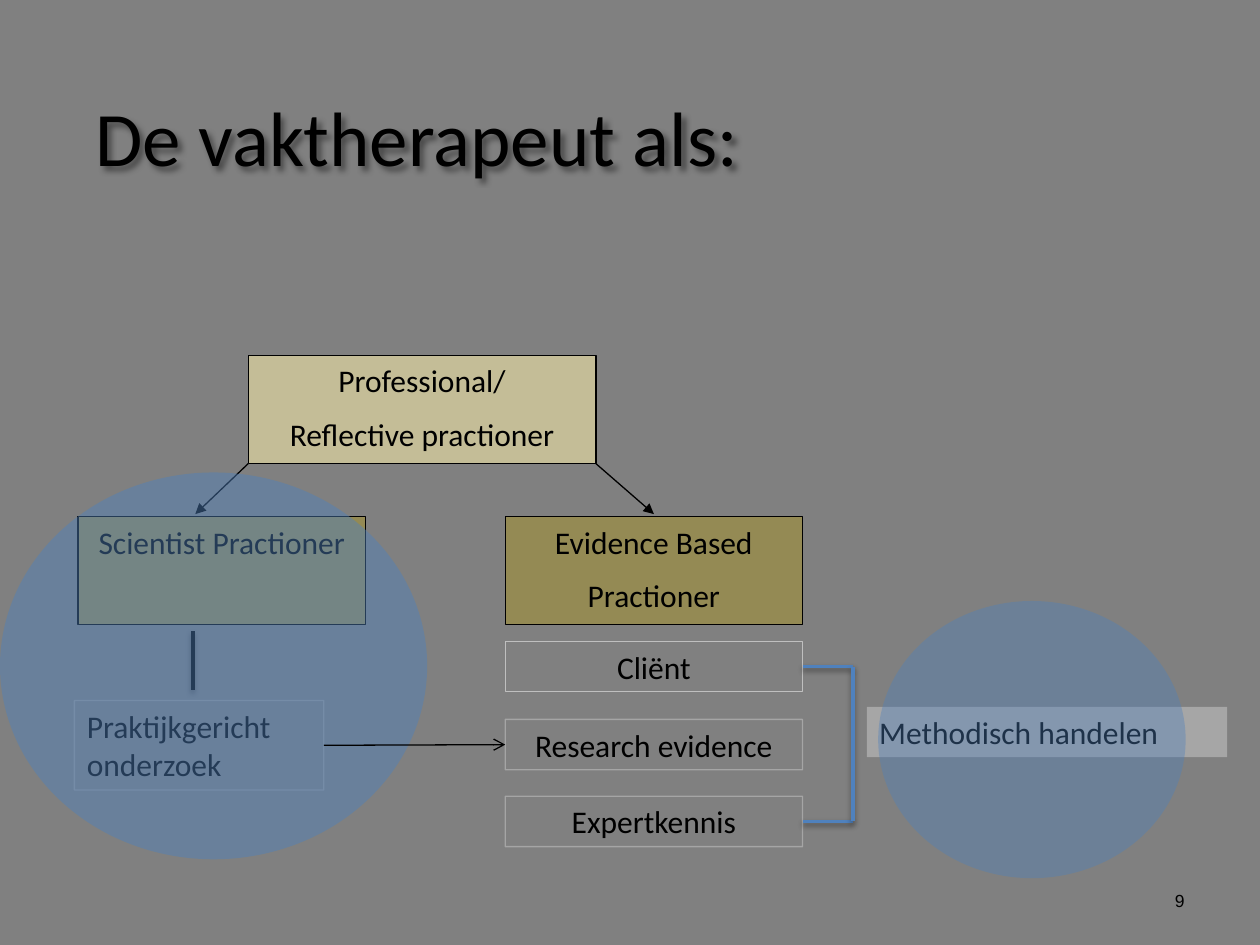
from lxml import etree
from pptx import Presentation
from pptx.dml.color import RGBColor
from pptx.enum.shapes import MSO_CONNECTOR, MSO_SHAPE
from pptx.enum.text import MSO_ANCHOR, PP_ALIGN
from pptx.oxml import parse_xml
from pptx.oxml.ns import nsdecls, qn
from pptx.util import Inches, Pt

BLACK = RGBColor(0x00, 0x00, 0x00)
BACKGROUND = RGBColor(0x80, 0x80, 0x80)
SAND = RGBColor(0xC4, 0xBD, 0x97)
OLIVE = RGBColor(0x94, 0x8A, 0x54)
LIGHT_GRAY = RGBColor(0xBF, 0xBF, 0xBF)
GRAY = RGBColor(0xA6, 0xA6, 0xA6)
BLUE = RGBColor(0x4F, 0x81, 0xBD)

prs = Presentation()
prs.slide_width, prs.slide_height = Inches(10), Inches(7.5)
slide = prs.slides.add_slide(prs.slide_layouts[6])
slide.background.fill.solid()
slide.background.fill.fore_color.rgb = BACKGROUND
shapes = slide.shapes


def write(sp, text, size=18, font="Calibri", align=PP_ALIGN.CENTER,
          anchor=MSO_ANCHOR.TOP, gap=9):
    """Fill a shape with one paragraph per line of text, gap points apart."""
    tf = sp.text_frame
    tf.word_wrap = True
    tf.vertical_anchor = anchor
    for i, line in enumerate(text.split("\n")):
        p = tf.add_paragraph() if i else tf.paragraphs[0]
        p.alignment = align
        p.space_before = Pt(gap if i else 0)
        r = p.add_run()
        r.text = line
        r.font.size, r.font.name = Pt(size), font
        r.font.color.rgb = BLACK


def set_effects(sp, blur=0, dist=0, angle=90, alpha=0):
    """Give a shape a black shadow, or an empty effect list when alpha is 0."""
    shadow = (f'<a:outerShdw blurRad="{Pt(blur)}" dist="{Pt(dist)}" '
              f'dir="{angle * 60000}" rotWithShape="0"><a:srgbClr val="000000">'
              f'<a:alpha val="{alpha * 1000}"/></a:srgbClr></a:outerShdw>')
    sp._element.spPr.append(parse_xml(
        f'<a:effectLst {nsdecls("a")}>{shadow if alpha else ""}</a:effectLst>'))


# Boxes: text, left, top, width, height, fill, line, line opacity, alignment
CENTER, LEFT = PP_ALIGN.CENTER, PP_ALIGN.LEFT
boxes = {}
for text, x, y, w, h, fill, line, opacity, align in [
    ("Professional/\nReflective practioner", 1.97, 2.82, 2.76, 0.86, SAND, BLACK, 100, CENTER),
    ("Evidence Based\nPractioner", 4.01, 4.1, 2.36, 0.86, OLIVE, BLACK, 100, CENTER),
    ("Scientist Practioner", 0.62, 4.1, 2.28, 0.86, OLIVE, BLACK, 100, CENTER),
    ("Cliënt", 4.01, 5.09, 2.36, 0.4, None, LIGHT_GRAY, 100, CENTER),
    ("Research evidence", 4.01, 5.71, 2.36, 0.4, None, LIGHT_GRAY, 59, CENTER),
    ("Expertkennis", 4.01, 6.32, 2.36, 0.4, None, LIGHT_GRAY, 59, CENTER),
    ("Praktijkgericht onderzoek", 0.59, 5.56, 1.98, 0.71, None, GRAY, 59, LEFT),
    ("Methodisch handelen", 6.88, 5.61, 2.86, 0.4, GRAY, None, 100, LEFT),
]:
    sp = shapes.add_shape(MSO_SHAPE.RECTANGLE, Inches(x), Inches(y), Inches(w), Inches(h))
    sp.shadow.inherit = False
    if fill is None:
        sp.fill.background()
    else:
        sp.fill.solid()
        sp.fill.fore_color.rgb = fill
    if line is None:
        sp.line.fill.background()
    else:
        sp.line.color.rgb = line
        sp.line.width = Pt(0.75)
        if opacity < 100:
            color = sp.line._ln.find(".//" + qn("a:srgbClr"))
            etree.SubElement(color, qn("a:alpha")).set("val", str(opacity * 1000))
    write(sp, text, align=align)
    boxes[text] = sp

# Translucent circles over the boxes
for x, y, w, h, opacity in [(0, 3.75, 3.39, 3.07, 46), (6.97, 4.77, 2.44, 2.2, 39)]:
    sp = shapes.add_shape(MSO_SHAPE.OVAL, Inches(x), Inches(y), Inches(w), Inches(h))
    sp.shadow.inherit = False
    sp.fill.solid()
    sp.fill.fore_color.rgb = BLUE
    color = sp._element.spPr.find(".//" + qn("a:srgbClr"))
    etree.SubElement(color, qn("a:alpha")).set("val", str(opacity * 1000))
    sp.line.fill.background()
circles = [shapes[-2], shapes[-1]]

# Lines: start, end, colour, width, arrowhead, box at start, box at end
client, research, expert, practice = (boxes[name] for name in (
    "Cliënt", "Research evidence", "Expertkennis", "Praktijkgericht onderzoek"))
for (x1, y1), (x2, y2), color, width, head, start, end in [
    ((1.97, 3.68), (1.55, 4.08), BLACK, 0.75, "triangle", None, None),
    ((4.73, 3.68), (5.19, 4.08), BLACK, 0.75, "triangle", None, None),
    ((1.53, 5.01), (1.53, 5.48), BLACK, 2, None, None, None),
    ((6.37, 5.29), (6.77, 5.29), BLUE, 2, None, client, None),
    ((6.37, 6.52), (6.77, 6.52), BLUE, 2, None, expert, None),
    ((6.77, 5.29), (6.77, 6.52), BLUE, 2, None, None, None),
    ((2.57, 5.91), (4.01, 5.91), BLACK, 0.75, "arrow", practice, research),
]:
    cx = shapes.add_connector(MSO_CONNECTOR.STRAIGHT, Inches(x1), Inches(y1),
                              Inches(x2), Inches(y2))
    if start is not None:
        cx.begin_connect(start, 3)
    if end is not None:
        cx.end_connect(end, 1)
    else:
        # Keep every line but the joined arrow beneath the circles
        circles[0]._element.addprevious(cx._element)
    cx.line.color.rgb = color
    cx.line.width = Pt(width)
    if head:
        etree.SubElement(cx.line._ln, qn("a:tailEnd")).set("type", head)
        set_effects(cx)
    else:
        set_effects(cx, blur=3.1, dist=1.6, alpha=38)

number = shapes.add_textbox(Inches(7.17), Inches(6.95), Inches(2.33), Inches(0.4))
write(number, "9", size=10, font="Arial", align=PP_ALIGN.RIGHT, anchor=MSO_ANCHOR.MIDDLE)

title = shapes.add_textbox(Inches(0.66), Inches(0.74), Inches(9), Inches(0.67))
write(title, "De vaktherapeut als:", size=44, align=LEFT, anchor=MSO_ANCHOR.MIDDLE)
set_effects(title, blur=3, dist=3, angle=45, alpha=43)

prs.save("out.pptx")
